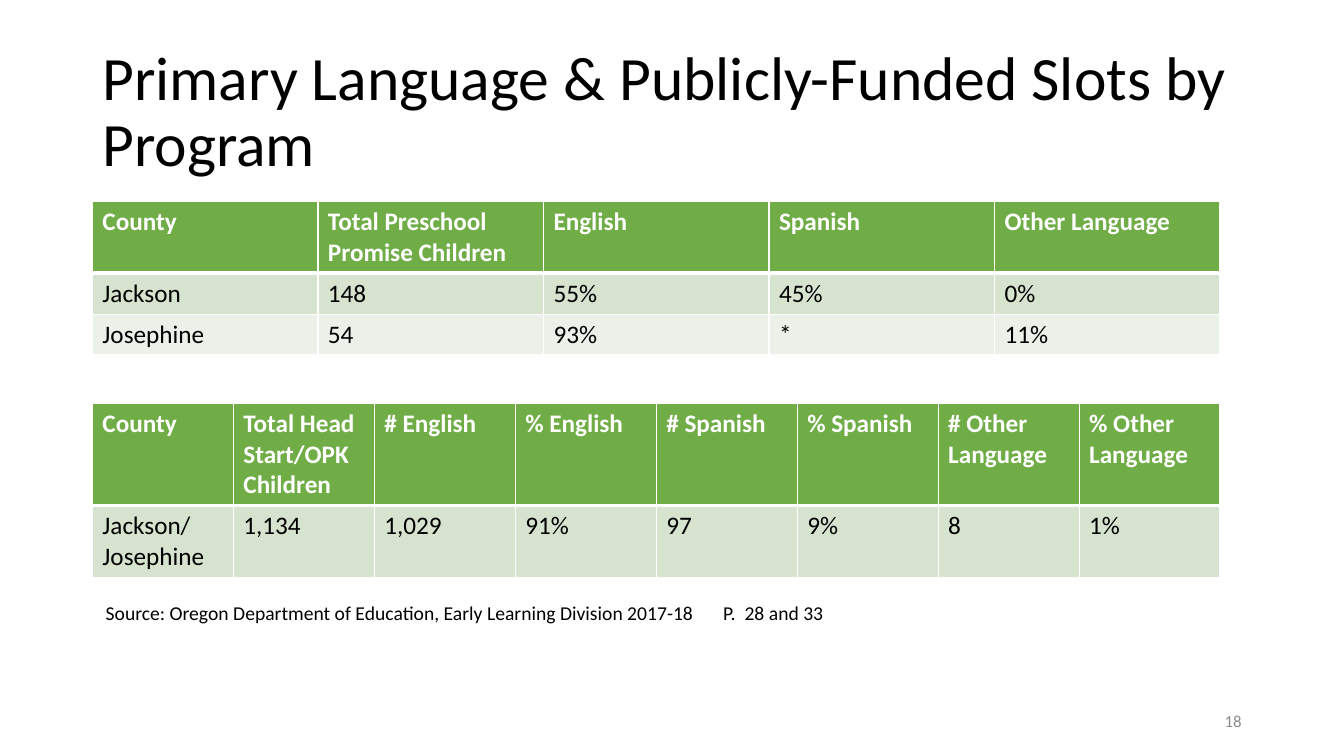
from lxml import etree
from pptx import Presentation
from pptx.dml.color import RGBColor
from pptx.enum import text
from pptx.oxml import ns
from pptx.util import Pt

FONT = "Calibri"
BLACK, WHITE, GREY = "000000", "FFFFFF", "8C8C8C"
HEADER_GREEN = "70AD47"
BANDS = ["D5E3CF", "EBF1E9"]

PRESCHOOL_PROMISE = [
    ["County", "Total Preschool Promise Children", "English", "Spanish", "Other Language"],
    ["Jackson", "148", "55%", "45%", "0%"],
    ["Josephine", "54", "93%", "*", "11%"],
]
HEAD_START = [
    ["County", "Total Head Start/OPK Children", "# English", "% English",
     "# Spanish", "% Spanish", "# Other Language", "% Other Language"],
    ["Jackson/ Josephine", "1,134", "1,029", "91%", "97", "9%", "8", "1%"],
]


def rgb(value):
    return RGBColor.from_string(value)


def add_run(paragraph, words, size, color=BLACK, bold=False):
    run = paragraph.add_run()
    run.text = words
    run.font.name = FONT
    run.font.size = Pt(size)
    run.font.bold = bold
    run.font.color.rgb = rgb(color)


def set_borders(cell, widths):
    properties = cell._tc.get_or_add_tcPr()
    for position, (side, width) in enumerate(widths.items()):
        line = etree.Element(ns.qn(f"a:ln{side}"), w=str(Pt(width)))
        fill = etree.SubElement(line, ns.qn("a:solidFill"))
        etree.SubElement(fill, ns.qn("a:srgbClr"), val=WHITE)
        properties.insert(position, line)


def add_title(slide, left, top, width, height):
    title = slide.shapes.title
    title.left, title.top, title.width, title.height = map(Pt, (left, top, width, height))
    frame = title.text_frame
    frame.auto_size = text.MSO_AUTO_SIZE.NONE
    frame.vertical_anchor = text.MSO_ANCHOR.MIDDLE
    heading = frame.paragraphs[0]
    heading.alignment = text.PP_ALIGN.LEFT
    heading.line_spacing = 0.9
    add_run(heading, "Primary Language & Publicly-Funded Slots by Program", 44)


def add_language_table(slide, left, top, width, row_heights, records):
    columns = len(records[0])
    table = slide.shapes.add_table(
        len(records), columns, Pt(left), Pt(top), Pt(width), Pt(sum(row_heights))).table
    for column in table.columns:
        column.width = Pt(width / columns)
    for r, (record, height) in enumerate(zip(records, row_heights)):
        table.rows[r].height = Pt(height)
        is_header = r == 0
        for c, value in enumerate(record):
            cell = table.cell(r, c)
            cell.fill.solid()
            cell.fill.fore_color.rgb = rgb(HEADER_GREEN if is_header else BANDS[(r - 1) % 2])
            set_borders(cell, {"L": 1, "R": 1, "T": 3 if r == 1 else 1, "B": 3 if is_header else 1})
            add_run(cell.text_frame.paragraphs[0], value, 18,
                    WHITE if is_header else BLACK, is_header)


def add_text_area(slide, left, top, width, height):
    frame = slide.shapes.add_textbox(Pt(left), Pt(top), Pt(width), Pt(height)).text_frame
    frame.word_wrap = True
    return frame


def add_source(slide, left, top, width, height):
    source = add_text_area(slide, left, top, width, height).paragraphs[0]
    tabs = etree.SubElement(source._p.get_or_add_pPr(), ns.qn("a:tabLst"))
    etree.SubElement(tabs, ns.qn("a:tab"), pos=str(Pt(441)), algn="l")
    add_run(source, "Source: Oregon Department of Education, Early Learning Division 2017-18\t", 14)
    add_run(source, "P.  28 and 33", 14)


def add_page_number(slide, left, top, width, height):
    frame = add_text_area(slide, left, top, width, height)
    frame.vertical_anchor = text.MSO_ANCHOR.MIDDLE
    number = frame.paragraphs[0]
    number.alignment = text.PP_ALIGN.RIGHT
    add_run(number, "18", 12, GREY)


def main():
    deck = Presentation()
    deck.slide_width, deck.slide_height = Pt(960), Pt(540)
    slide = deck.slides.add_slide(deck.slide_layouts[5])
    add_title(slide, 66, 28.75, 828, 104.4)
    add_language_table(slide, 66, 144, 805.6, [50.4, 29.2, 29.2], PRESCHOOL_PROMISE)
    add_language_table(slide, 66, 288, 805.6, [72, 50.4], HEAD_START)
    add_source(slide, 68.4, 425.5, 618.5, 24.5)
    add_page_number(slide, 678, 500.5, 216, 28.75)
    deck.save("out.pptx")


if __name__ == "__main__":
    main()
